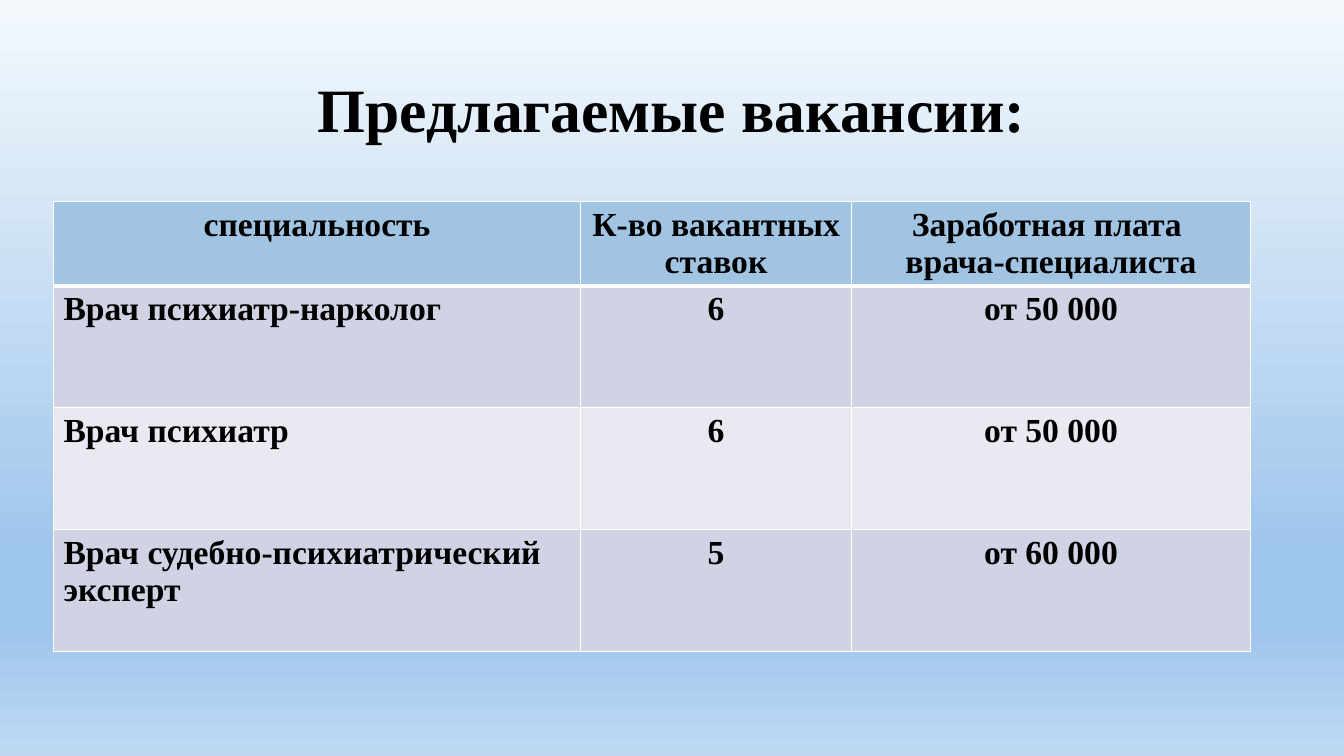
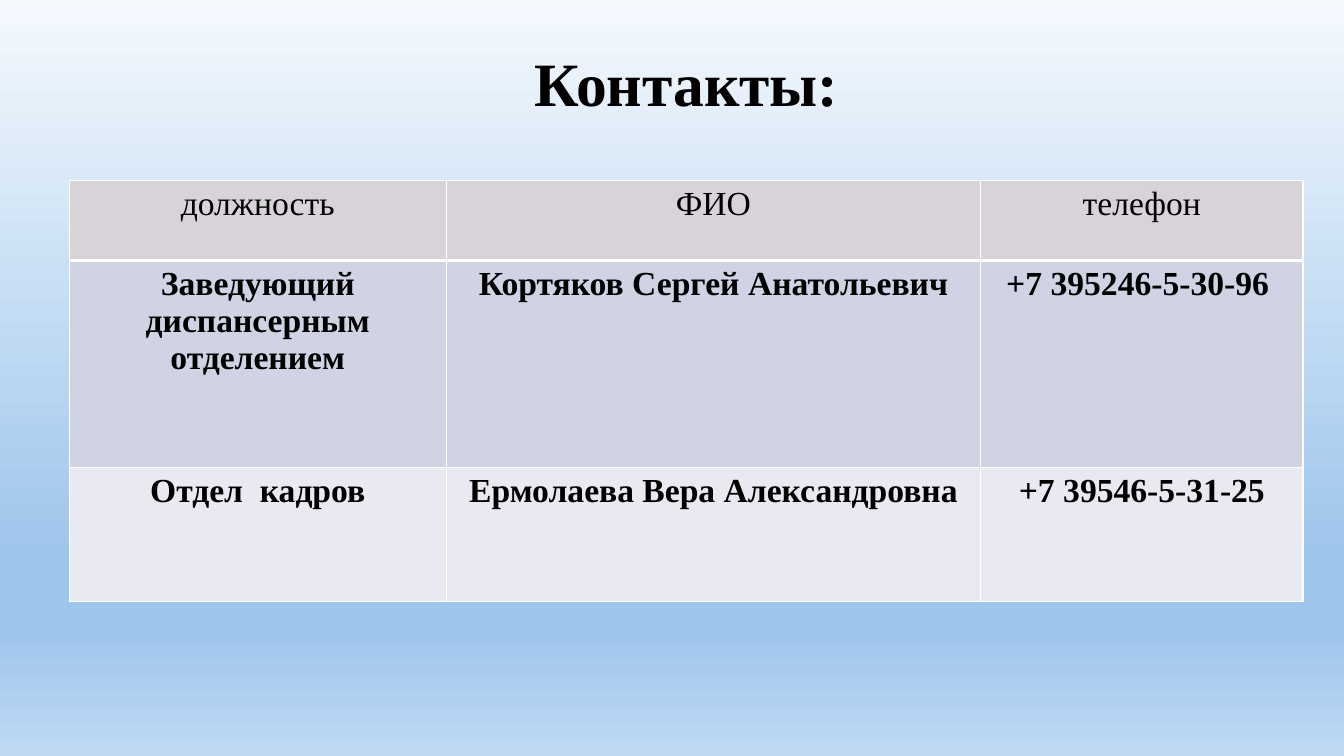
from lxml.etree import SubElement
from pptx import Presentation
from pptx.dml.color import RGBColor
from pptx.enum.text import MSO_ANCHOR, MSO_AUTO_SIZE, PP_ALIGN
from pptx.oxml import parse_xml
from pptx.oxml.ns import nsdecls, qn
from pptx.util import Pt

PX = 9525  # 96 px to the inch
FONT = "Times New Roman"
INK, LINE = "000000", "FFFFFF"
BANDS = ["D0D3E3", "E9EAF1"]
SKY = [(0, "F4F9FD"), (74, "9EC5EC"), (83, "9EC5EC"), (100, "BFD9F3")]

# Title box, table corner, column widths and row heights are in px
PAGES = [
    dict(
        title="Предлагаемые вакансии:", box=(88, 38, 1104, 139),
        left=51, top=192, cols=[502, 258, 380], rows=[80, 116, 116, 116],
        head="A1C4E3", bold=True, first=PP_ALIGN.LEFT,
        cells=[
            ["специальность", "К-во вакантных\nставок",
             "Заработная плата \nврача-специалиста"],
            ["Врач психиатр-нарколог", "6", "от 50 000"],
            ["Врач психиатр", "6", "от 50 000"],
            ["Врач судебно-психиатрический эксперт", "5", "от 60 000"],
        ],
    ),
    dict(
        title="Контакты:", box=(102, 58, 1104, 49),
        left=66, top=172, cols=[359, 509, 307], rows=[76, 197, 128],
        head="D8D3D9", bold=False, first=PP_ALIGN.CENTER,
        cells=[
            ["должность", "ФИО", "телефон"],
            ["Заведующий диспансерным отделением",
             "Кортяков Сергей Анатольевич", "+7 395246-5-30-96 "],
            ["Отдел  кадров", "Ермолаева Вера Александровна",
             "+7 39546-5-31-25"],
        ],
    ),
]


def style(para, size, bold, align):
    font = para.font
    font.name, font.size, font.bold = FONT, Pt(size), bold
    font.color.rgb = RGBColor.from_string(INK)
    para.alignment = align


def border(cell, top, bottom):
    props = cell._tc.get_or_add_tcPr()
    sides = [("L", 1), ("R", 1), ("T", top), ("B", bottom)]
    for i, (side, width) in enumerate(sides):
        props.insert(i, parse_xml(
            f'<a:ln{side} {nsdecls("a")} w="{Pt(width)}"><a:solidFill>'
            f'<a:srgbClr val="{LINE}"/></a:solidFill></a:ln{side}>'))


deck = Presentation()
deck.slide_width, deck.slide_height = 1280 * PX, 720 * PX

# Shared background on the master
master = deck.slide_master
fill = master.background.fill
fill.gradient()
fill.gradient_angle = 270
stops = master.element.find(".//" + qn("p:bg")).find(".//" + qn("a:gsLst"))
for old in list(stops):
    stops.remove(old)
for pos, tint in SKY:
    stop = SubElement(stops, qn("a:gs"), pos=str(pos * 1000))
    SubElement(stop, qn("a:srgbClr"), val=tint)

for page in PAGES:
    slide = deck.slides.add_slide(deck.slide_layouts.get_by_name("Title Only"))

    # Title
    title = slide.shapes.title
    title.left, title.top, title.width, title.height = [n * PX for n in page["box"]]
    frame = title.text_frame
    frame.text = page["title"]
    frame.auto_size = MSO_AUTO_SIZE.NONE
    frame.vertical_anchor = MSO_ANCHOR.MIDDLE
    para = frame.paragraphs[0]
    style(para, 44, True, PP_ALIGN.CENTER)
    para.line_spacing = 0.9

    # Table
    cols, rows = page["cols"], page["rows"]
    table = slide.shapes.add_table(
        len(rows), len(cols), page["left"] * PX, page["top"] * PX,
        sum(cols) * PX, sum(rows) * PX).table
    for col, width in zip(table.columns, cols):
        col.width = width * PX
    for row, height in zip(table.rows, rows):
        row.height = height * PX

    # Cells: a heavier line parts the header from the body
    for r, texts in enumerate(page["cells"]):
        for c, text in enumerate(texts):
            cell = table.cell(r, c)
            cell.text = text
            cell.fill.solid()
            tint = BANDS[(r - 1) % 2] if r else page["head"]
            cell.fill.fore_color.rgb = RGBColor.from_string(tint)
            border(cell, 3 if r == 1 else 1, 3 if r == 0 else 1)
            align = page["first"] if r and c == 0 else PP_ALIGN.CENTER
            for para in cell.text_frame.paragraphs:
                style(para, 24, r > 0 or page["bold"], align)

deck.save("out.pptx")
